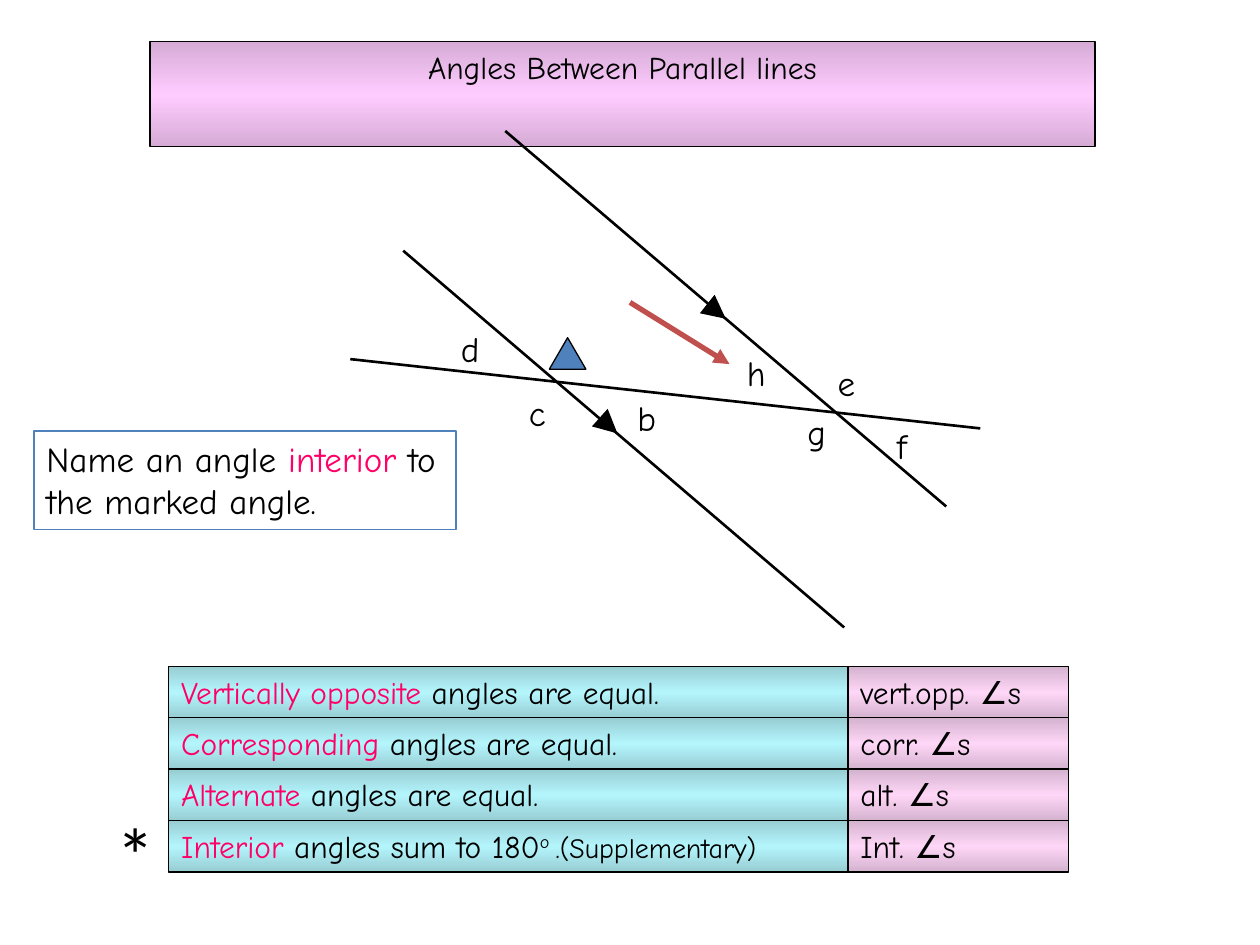
from pptx import Presentation
from pptx.dml.color import RGBColor
from pptx.enum.shapes import MSO_CONNECTOR, MSO_SHAPE
from pptx.enum.text import MSO_ANCHOR, MSO_AUTO_SIZE, PP_ALIGN
from pptx.oxml import parse_xml
from pptx.oxml.ns import nsdecls, qn
from pptx.util import Inches, Pt

STRAIGHT = MSO_CONNECTOR.STRAIGHT
RECT, TRIANGLE = MSO_SHAPE.RECTANGLE, MSO_SHAPE.ISOSCELES_TRIANGLE
LEFT, CENTER = PP_ALIGN.LEFT, PP_ALIGN.CENTER
TOP = MSO_ANCHOR.TOP
FIT_SHAPE = MSO_AUTO_SIZE.SHAPE_TO_FIT_TEXT

FONT = "Comic Neue"
BLACK, PINK, BLUE, RED = "000000", "FF0066", "4F81BD", "C0504D"
LILAC = ("D5ABD5", "FFCCFF")
AQUA = ("97CDD3", "B4F5FC")
ROSE = ("D4B3CF", "FED6F7")

LABELS = [("h", 5.83, 2.74), ("f", 7.02, 3.32), ("e", 6.55, 2.82),
          ("b", 4.96, 3.1), ("g", 6.31, 3.21), ("d", 3.56, 2.55),
          ("c", 4.1, 3.06)]
RULES = [
    ([("Vertically opposite", PINK), (" angles are equal.", BLACK)], "vert.opp. ∠s"),
    ([("Corresponding", PINK), (" angles are equal.", BLACK)], "corr. ∠s"),
    ([("Alternate ", PINK), ("angles are equal.", BLACK)], "alt. ∠s"),
    ([("Interior ", PINK), ("angles sum to 180", BLACK), ("o ", BLACK),
      (".(Supplementary)", BLACK)], "Int. ∠s"),
]


def rgb(color):
    return RGBColor.from_string(color)


def box(left, top, width, height):
    return [Inches(v) for v in (left, top, width, height)]


def write(s, runs, size, align=LEFT, font=FONT):
    """Fill a shape with one paragraph of (text, colour) runs."""
    tf = s.text_frame
    tf.word_wrap = True
    tf.auto_size = FIT_SHAPE
    tf.vertical_anchor = TOP
    p = tf.paragraphs[0]
    p.alignment = align
    for text, color in runs:
        r = p.add_run()
        r.text = text
        r.font.name = font
        r.font.size = Pt(size)
        r.font.color.rgb = rgb(color)
    return p


def outline(s, color):
    s.line.color.rgb = rgb(color)
    s.line.width = Pt(0.75)


def fill_gradient(s, colors):
    """Shade vertically from the edge colour to the middle colour and back."""
    edge, middle = colors
    s.fill.gradient()
    s.fill.gradient_angle = 270
    stops = "".join(
        f'<a:gs pos="{pos}"><a:srgbClr val="{color}"/></a:gs>'
        for pos, color in ((0, edge), (50000, middle), (100000, edge)))
    old = s._element.spPr.find(".//" + qn("a:gsLst"))
    old.getparent().replace(
        old, parse_xml(f'<a:gsLst {nsdecls("a")}>{stops}</a:gsLst>'))


def add_panel(shapes, place, kind=RECT, line=BLACK):
    s = shapes.add_shape(kind, *box(*place))
    s.shadow.inherit = False
    s.fill.background()
    outline(s, line)
    return s


def add_label(shapes, text, place, size, align=LEFT, font=FONT):
    s = shapes.add_textbox(*box(*place))
    write(s, [(text, BLACK)], size, align, font)


def add_line(shapes, start, end, width=1.5, color=BLACK, arrow=False):
    s = shapes.add_connector(STRAIGHT, *box(*start, *end))
    s.line.color.rgb = rgb(color)
    s.line.width = Pt(width)
    if arrow:
        s.line._get_or_add_ln().append(
            parse_xml(f'<a:tailEnd {nsdecls("a")} type="triangle"/>'))
    s._element.spPr.append(parse_xml(f'<a:effectLst {nsdecls("a")}/>'))


def add_title(slide):
    s = slide.shapes.title
    s.left, s.top, s.width, s.height = box(1.19, 0.33, 7.5, 0.51)
    fill_gradient(s, LILAC)
    outline(s, BLACK)
    write(s, [("Angles Between Parallel lines", BLACK)], 18, CENTER)


def add_diagram(shapes):
    parallels = shapes.add_group_shape().shapes
    add_line(parallels, (4.01, 1.04), (7.51, 4.02))
    add_line(parallels, (3.2, 1.99), (6.7, 4.98))
    add_line(parallels, (5.66, 2.45), (5.76, 2.53), 4.5, arrow=True)
    add_line(parallels, (4.8, 3.35), (4.9, 3.44), 4.5, arrow=True)
    add_line(shapes, (2.78, 2.85), (7.78, 3.4))
    marker = add_panel(shapes, (4.36, 2.68, 0.29, 0.25), TRIANGLE)
    marker.fill.solid()
    marker.fill.fore_color.rgb = rgb(BLUE)
    for letter, left, top in LABELS:
        add_label(shapes, letter, (left, top, 0.43, 0.43), 20)


def add_question(shapes):
    s = add_panel(shapes, (0.27, 3.42, 3.35, 0.78), line=BLUE)
    write(s, [("Name an angle ", BLACK), ("interior ", PINK),
              ("to the marked angle.", BLACK)], 20)
    add_line(shapes, (5, 2.4), (5.79, 2.89), 3, RED, arrow=True)


def add_rules(shapes):
    for i, (rule, reason) in enumerate(RULES):
        top = 5.29 + i * 0.407
        s = add_panel(shapes, (1.34, top, 5.4, 0.41))
        fill_gradient(s, AQUA)
        p = write(s, rule, 18)
        s = add_panel(shapes, (6.73, top, 1.75, 0.41))
        fill_gradient(s, ROSE)
        write(s, [(reason, BLACK)], 18)
    degree, note = p.runs[2:]
    degree.font._element.set("baseline", "30000")
    note.font.size = Pt(16)
    add_label(shapes, "*", (0.74, 6.35, 0.68, 0.83), 44, CENTER, "Calibri")


def main():
    prs = Presentation()
    prs.slide_width, prs.slide_height = Inches(10), Inches(7.5)
    slide = prs.slides.add_slide(prs.slide_layouts[5])
    add_title(slide)
    add_diagram(slide.shapes)
    add_question(slide.shapes)
    add_rules(slide.shapes)
    prs.save("out.pptx")


if __name__ == "__main__":
    main()
